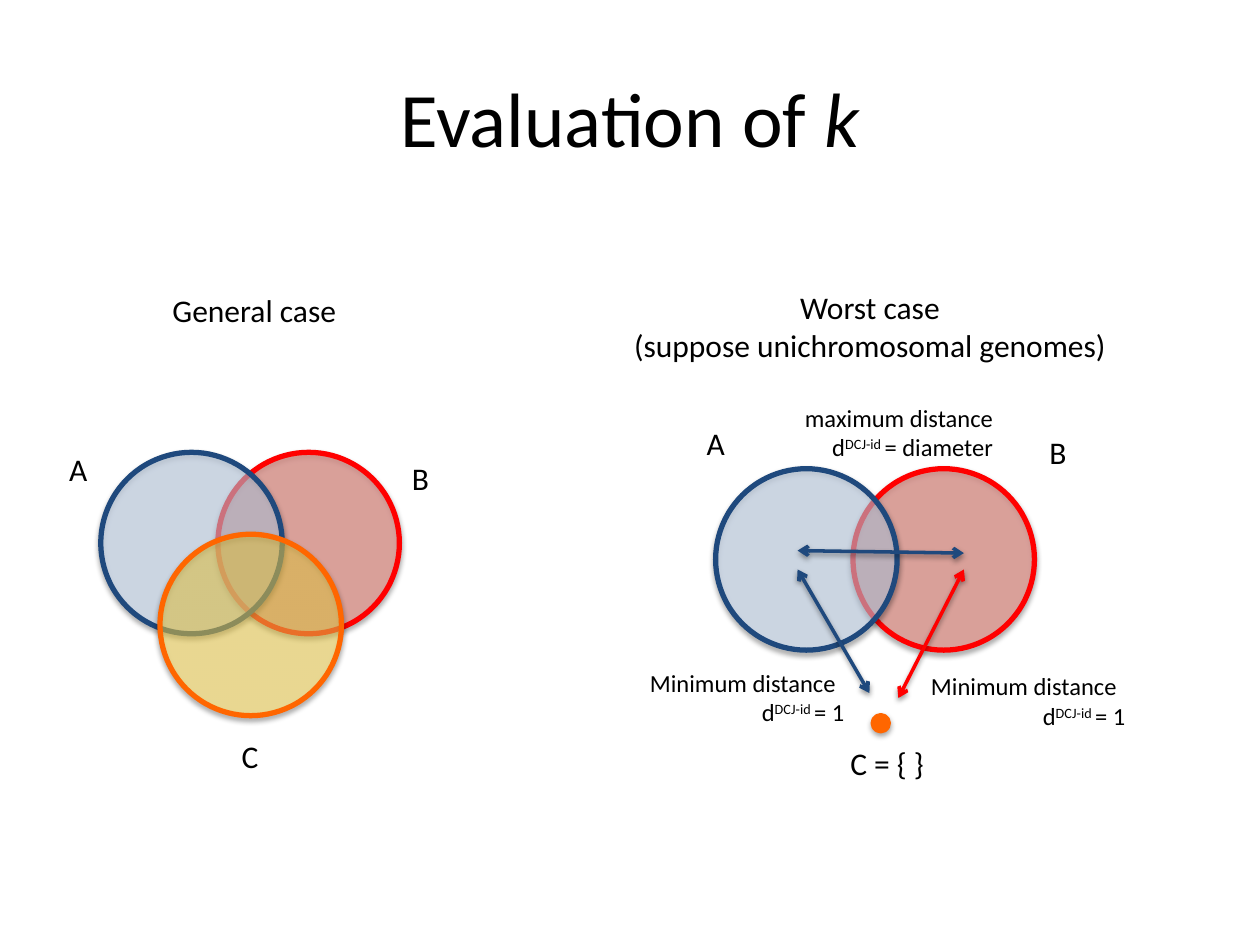
from dataclasses import dataclass

from lxml import etree
from pptx import Presentation
from pptx.dml.color import RGBColor
from pptx.enum.shapes import MSO_CONNECTOR, MSO_SHAPE
from pptx.enum.text import MSO_ANCHOR, PP_ALIGN
from pptx.oxml.ns import qn
from pptx.util import Inches, Pt

LEFT, CENTER, RIGHT = PP_ALIGN.LEFT, PP_ALIGN.CENTER, PP_ALIGN.RIGHT
TOP, MIDDLE = MSO_ANCHOR.TOP, MSO_ANCHOR.MIDDLE
OVAL, STRAIGHT = MSO_SHAPE.OVAL, MSO_CONNECTOR.STRAIGHT

COLUMNS, ROWS = 100, 75
WIDTH, HEIGHT = Inches(10), Inches(7.5)
FONT = "Calibri"
BLACK, BLUE, RED, ORANGE = "000000", "1F497D", "FF0000", "FF6600"
SALMON, SKY, YELLOW = "E37D72", "C6D9F1", "FFDC51"
DIAMETER = 14.4


@dataclass(frozen=True)
class Piece:
    text: str
    italic: bool = False
    raised: bool = False


@dataclass(frozen=True)
class Circle:
    column: float
    row: float
    fill: str
    outline: str
    opacity: int = 100
    diameter: float = DIAMETER


@dataclass(frozen=True)
class Arrow:
    start: tuple[float, float]
    end: tuple[float, float]
    color: str


@dataclass(frozen=True)
class Label:
    text: str
    column: float
    row: float
    width: float


@dataclass(frozen=True)
class Distance:
    caption: str
    value: str
    column: float
    row: float
    align: PP_ALIGN = LEFT


GENERAL_CIRCLES = [
    Circle(17.3, 35.9, SALMON, RED, 56),
    Circle(8, 35.9, SKY, BLUE, 52),
    Circle(12.7, 42.4, YELLOW, ORANGE, 50),
]
WORST_CIRCLES = [
    Circle(67.7, 37.2, SALMON, RED, 56),
    Circle(56.8, 37.2, SKY, BLUE, 52),
    Circle(69.3, 56.8, ORANGE, ORANGE, diameter=1.2),
]
ARROWS = [
    Arrow((63.3, 45.2), (69, 55), BLUE),
    Arrow((76.5, 45.2), (71.3, 55.4), RED),
    Arrow((63.3, 43.7), (76.5, 43.9), BLUE),
]
LABELS = [
    Label("General case", 12.7, 22.6, 15.2),
    Label("A", 4.5, 35.2, 3.5),
    Label("B", 31.7, 35.9, 3.4),
    Label("C", 18.2, 58, 3.4),
    Label("A", 55.1, 33.2, 3.5),
    Label("B", 82.3, 33.9, 3.4),
    Label("C = { }", 66.5, 58.6, 7.9),
]
DISTANCES = [
    Distance("Minimum distance", "= 1", 72.9, 52.8),
    Distance("Minimum distance", "= 1", 50.6, 52.5),
    Distance("maximum distance", "= diameter", 62.4, 31.5, RIGHT),
]


def across(columns: float) -> int:
    return round(WIDTH * columns / COLUMNS)


def down(rows: float) -> int:
    return round(HEIGHT * rows / ROWS)


def rgb(color: str) -> RGBColor:
    return RGBColor.from_string(color)


def add_text(slide, paragraphs, column, row, width, height, *, size=18,
             aligns=(LEFT,), anchor=TOP, wrap=True):
    box = slide.shapes.add_textbox(across(column), down(row), across(width), down(height))
    frame = box.text_frame
    frame.word_wrap = wrap
    frame.vertical_anchor = anchor
    for index, (pieces, align) in enumerate(zip(paragraphs, aligns)):
        paragraph = frame.add_paragraph() if index else frame.paragraphs[0]
        paragraph.alignment = align
        for piece in pieces:
            run = paragraph.add_run()
            run.text = piece.text
            run.font.name = FONT
            run.font.size = Pt(size)
            run.font.color.rgb = rgb(BLACK)
            if piece.italic:
                run.font.italic = True
            if piece.raised:
                run.font._element.set("baseline", "30000")


def add_shadow(shape, distance: float, opacity: int) -> None:
    effects = etree.SubElement(shape._element.spPr, qn("a:effectLst"))
    shadow = etree.SubElement(effects, qn("a:outerShdw"), blurRad=str(Pt(3.1)),
                              dist=str(Pt(distance)), dir="5400000", rotWithShape="0")
    color = etree.SubElement(shadow, qn("a:srgbClr"), val=BLACK)
    etree.SubElement(color, qn("a:alpha"), val=str(opacity * 1000))


def add_circle(slide, circle: Circle) -> None:
    shape = slide.shapes.add_shape(OVAL, across(circle.column), down(circle.row),
                                   across(circle.diameter), down(circle.diameter))
    shape.fill.solid()
    shape.fill.fore_color.rgb = rgb(circle.fill)
    if circle.opacity < 100:
        color = shape._element.spPr.find(qn("a:solidFill")).find(qn("a:srgbClr"))
        etree.SubElement(color, qn("a:alpha"), val=str(circle.opacity * 1000))
    shape.line.color.rgb = rgb(circle.outline)
    shape.line.width = Pt(3)
    add_shadow(shape, 1.8, 35)


def add_arrow(slide, arrow: Arrow) -> None:
    connector = slide.shapes.add_connector(
        STRAIGHT, across(arrow.start[0]), down(arrow.start[1]),
        across(arrow.end[0]), down(arrow.end[1]))
    connector.line.color.rgb = rgb(arrow.color)
    connector.line.width = Pt(2)
    line = connector._element.spPr.find(qn("a:ln"))
    for tip in ("a:headEnd", "a:tailEnd"):
        etree.SubElement(line, qn(tip), type="arrow")
    add_shadow(connector, 1.6, 38)


def add_label(slide, label: Label) -> None:
    add_text(slide, [[Piece(label.text)]], label.column, label.row, label.width, 4, wrap=False)


def add_distance(slide, distance: Distance) -> None:
    formula = [Piece("d"), Piece("DCJ-id ", raised=True), Piece(distance.value)]
    add_text(slide, [[Piece(distance.caption)], formula], distance.column, distance.row,
             17.4, 5.7, size=14, aligns=(distance.align, RIGHT))


def main() -> None:
    presentation = Presentation()
    presentation.slide_width, presentation.slide_height = WIDTH, HEIGHT
    slide = presentation.slides.add_slide(presentation.slide_layouts[6])
    add_text(slide, [[Piece("Evaluation of "), Piece("k", italic=True)]], 5, 3, 90, 12.5,
             size=44, aligns=(CENTER,), anchor=MIDDLE)
    add_text(slide, [[Piece("Worst case")], [Piece("(suppose unichromosomal genomes)")]],
             47.3, 22.4, 43.5, 7.1, aligns=(CENTER, CENTER))
    for circle in GENERAL_CIRCLES + WORST_CIRCLES:
        add_circle(slide, circle)
    for arrow in ARROWS:
        add_arrow(slide, arrow)
    for label in LABELS:
        add_label(slide, label)
    for distance in DISTANCES:
        add_distance(slide, distance)
    presentation.save("out.pptx")


if __name__ == "__main__":
    main()
